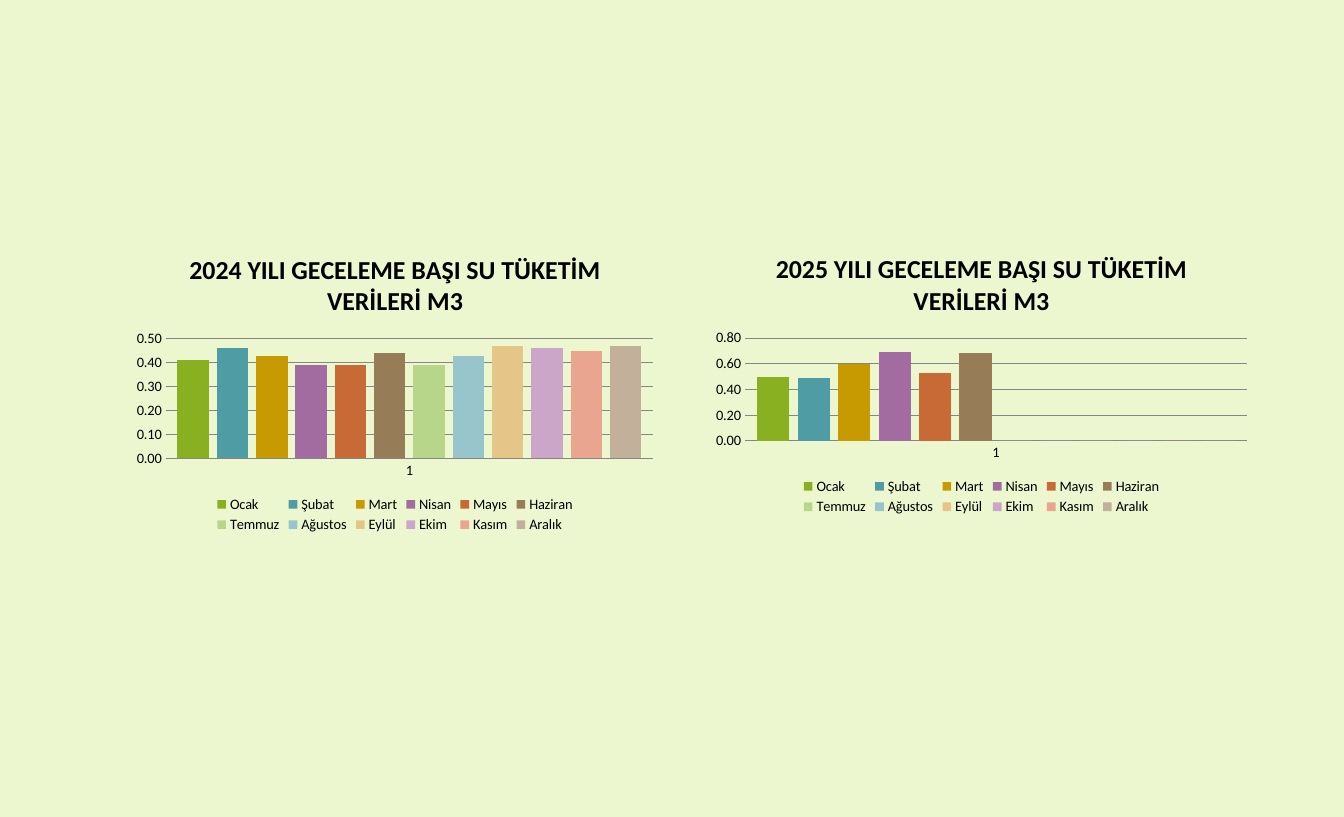
from pptx import Presentation
from pptx.chart.data import CategoryChartData
from pptx.dml.color import RGBColor
from pptx.enum.chart import XL_CHART_TYPE, XL_LEGEND_POSITION, XL_TICK_MARK
from pptx.util import Pt

EMU_PER_PX = 914400 / 103.5

MONTH_COLORS = {
    "Ocak": "88B020", "Şubat": "509CA5", "Mart": "C69A00",
    "Nisan": "A36CA0", "Mayıs": "C86A35", "Haziran": "977D57",
    "Temmuz": "B7D68A", "Ağustos": "98C5CC", "Eylül": "E6C588",
    "Ekim": "CBA6C9", "Kasım": "E9A590", "Aralık": "C2B09B",
}
WATER_2024 = [0.41, 0.46, 0.43, 0.39, 0.39, 0.44,
              0.39, 0.43, 0.47, 0.46, 0.45, 0.47]
WATER_2025 = [0.5, 0.49, 0.6, 0.69, 0.53, 0.68] + [0] * 6


def px(length):
    return round(length * EMU_PER_PX)


def color(value):
    return RGBColor.from_string(value)


class SlideBuilder:
    font_name = "Calibri"
    ink = "000000"
    rule = "868686"

    def __init__(self, deck, background):
        self.page = deck.slides.add_slide(deck.slide_layouts[6])
        fill = self.page.background.fill
        fill.solid()
        fill.fore_color.rgb = color(background)

    def style_font(self, font, size, bold=False):
        font.name = self.font_name
        font.size = Pt(size)
        font.bold = bold
        font.color.rgb = color(self.ink)

    def style_line(self, line):
        line.color.rgb = color(self.rule)
        line.width = Pt(0.75)

    def column_chart(self, box, title, values, maximum, step):
        data = CategoryChartData(number_format="0.00")
        data.categories = ["1"]
        for month, value in zip(MONTH_COLORS, values):
            data.add_series(month, [value])
        chart = self.page.shapes.add_chart(
            XL_CHART_TYPE.COLUMN_CLUSTERED, *map(px, box), data).chart
        self.style_font(chart.font, 10)
        self.title(chart, title)
        self.legend(chart)
        self.axes(chart, maximum, step)
        plot = chart.plots[0]
        plot.gap_width = 75
        plot.overlap = -25
        plot.vary_by_categories = False
        for series in plot.series:
            fill = series.format.fill
            fill.solid()
            fill.fore_color.rgb = color(MONTH_COLORS[series.name])

    def title(self, chart, text):
        chart.has_title = True
        chart.chart_title.include_in_layout = False
        para = chart.chart_title.text_frame.paragraphs[0]
        para.text = text
        self.style_font(para.font, 18, bold=True)

    def legend(self, chart):
        chart.has_legend = True
        chart.legend.position = XL_LEGEND_POSITION.BOTTOM
        chart.legend.include_in_layout = False

    def axes(self, chart, maximum, step):
        for axis in (chart.category_axis, chart.value_axis):
            axis.major_tick_mark = XL_TICK_MARK.NONE
            axis.minor_tick_mark = XL_TICK_MARK.NONE
        self.style_line(chart.category_axis.format.line)
        scale = chart.value_axis
        scale.minimum_scale = 0
        scale.maximum_scale = maximum
        scale.major_unit = step
        scale.tick_labels.number_format = "0.00"
        scale.tick_labels.number_format_is_linked = False
        scale.format.line.fill.background()
        scale.has_major_gridlines = True
        self.style_line(scale.major_gridlines.format.line)


def main():
    deck = Presentation()
    deck.slide_width = px(1344)
    deck.slide_height = px(817)
    slide = SlideBuilder(deck, "ECF7D0")
    slide.column_chart((126, 235, 538, 302),
                       "2024 YILI GECELEME BAŞI SU TÜKETİM VERİLERİ M3",
                       WATER_2024, 0.5, 0.1)
    slide.column_chart((705, 235, 553, 284),
                       "2025 YILI GECELEME BAŞI SU TÜKETİM VERİLERİ M3",
                       WATER_2025, 0.8, 0.2)
    deck.save("out.pptx")


if __name__ == "__main__":
    main()
